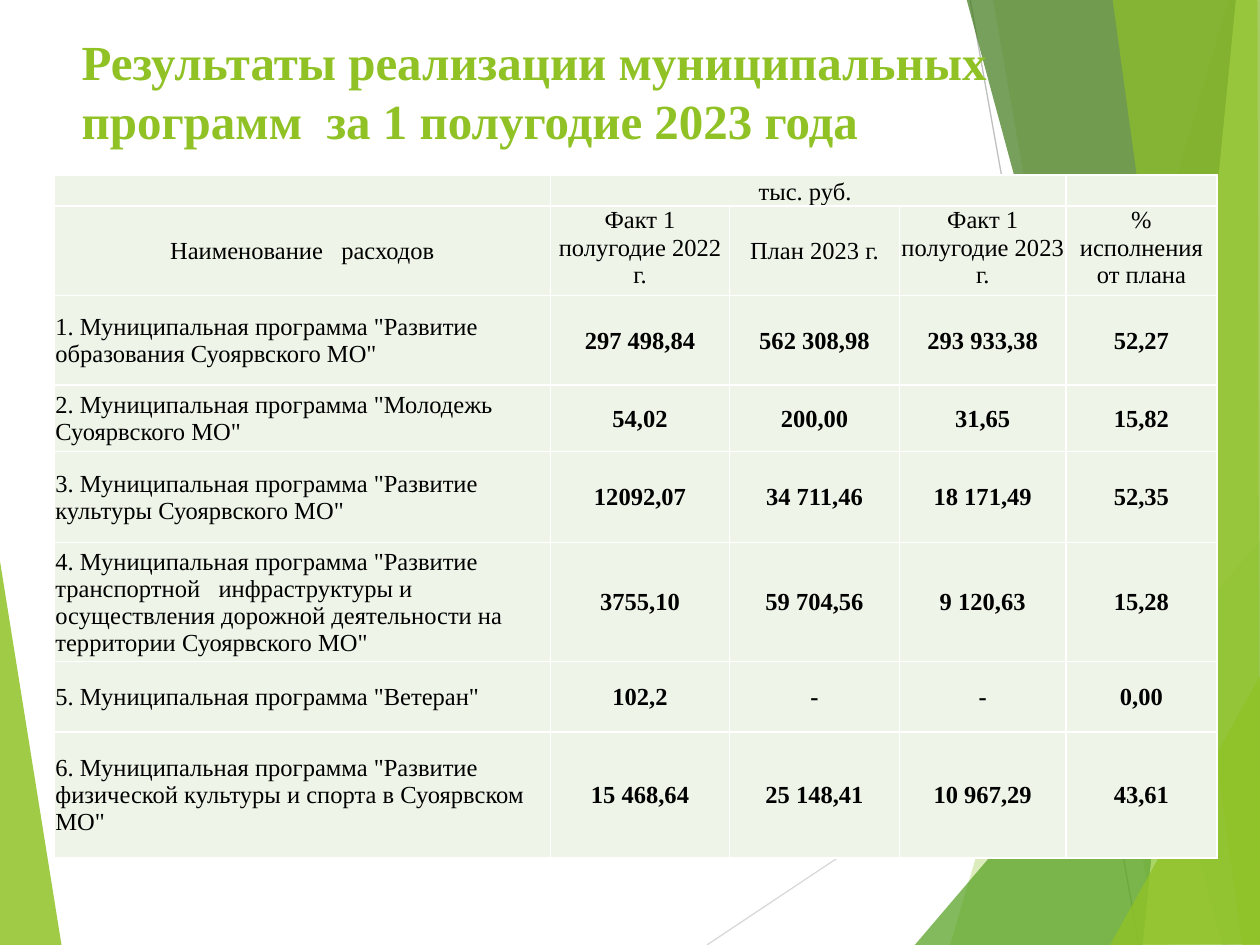
from dataclasses import dataclass

from lxml import etree
from pptx import Presentation
from pptx.dml.color import RGBColor
from pptx.enum.shapes import MSO_CONNECTOR
from pptx.enum.text import MSO_ANCHOR, PP_ALIGN
from pptx.oxml.ns import qn
from pptx.util import Inches, Pt

STRAIGHT = MSO_CONNECTOR.STRAIGHT
TOP, MIDDLE, BOTTOM = MSO_ANCHOR.TOP, MSO_ANCHOR.MIDDLE, MSO_ANCHOR.BOTTOM
LEFT, CENTER = PP_ALIGN.LEFT, PP_ALIGN.CENTER


@dataclass(frozen=True)
class Theme:
    font: str = "Times New Roman"
    accent: str = "90C226"
    text: str = "000000"
    cell: str = "EEF4E8"
    border: str = "FFFFFF"
    title_size: int = 28
    table_size: int = 14
    border_width: float = 1
    line_width: float = 0.75


@dataclass(frozen=True)
class Facet:
    points: tuple
    color: str
    opacity: int


@dataclass(frozen=True)
class Ray:
    start: tuple
    end: tuple
    color: str


THEME = Theme()

# Background, from back to front
DECORATIONS = (
    Facet(((-0.01, 4.39), (0.49, 7.51), (-0.01, 7.5)), THEME.accent, 85),
    Ray((5.61, 7.5), (10.01, 4.57), "D9D9D9"),
    Ray((7.7, 0), (9.04, 7.5), "BFBFBF"),
    Facet(((9.75, 0), (7.54, 7.5), (10.02, 7.51), (10.01, 0.01)), THEME.accent, 30),
    Facet(((7.88, -0.01), (9.19, 7.5), (10.01, 7.5), (10.01, -0.01)), THEME.accent, 20),
    Facet(((7.26, 7.5), (10, 4.29), (10.01, 7.5)), "54A021", 72),
    Facet(((7.67, -0.01), (9.7, 7.5), (10.01, 7.49), (10.01, -0.01)), "3F7819", 70),
    Facet(((9.81, -0.01), (9.07, 7.5), (10.01, 7.5), (10, -0.01)), "C0E474", 70),
    Facet(((8.83, -0.01), (9.86, 7.5), (10, 7.5), (9.98, -0.01)), THEME.accent, 65),
    Facet(((8.81, 7.5), (10.01, 5.35), (10.01, 7.49)), THEME.accent, 80),
)

TITLE = "Результаты реализации муниципальных \vпрограмм  за 1 полугодие 2023 года"
COLUMN_WIDTHS = (3.94, 1.42, 1.35, 1.32, 1.2)
ROW_HEIGHTS = (0.16, 0.63, 0.71, 0.53, 0.72, 0.79, 0.56, 1)
HEADER_ROWS = 2
HEADER_ANCHORS = (MIDDLE, TOP, MIDDLE, TOP, TOP)
TABLE_ROWS = (
    ("", "тыс. руб. ", "", "", ""),
    ("Наименование   расходов", "Факт 1 полугодие 2022 г.", "План 2023 г.",
     "Факт 1 полугодие 2023 г.", "% исполнения от плана"),
    ('1. Муниципальная программа "Развитие образования Суоярвского МО"',
     "297 498,84", "562 308,98", "293 933,38", "52,27"),
    ('2. Муниципальная программа "Молодежь Суоярвского МО"',
     "54,02", "200,00", "31,65", "15,82"),
    ('3. Муниципальная программа "Развитие культуры Суоярвского МО"',
     "12092,07", "34 711,46", "18 171,49", "52,35"),
    ('4. Муниципальная программа "Развитие транспортной   инфраструктуры и '
     'осуществления дорожной деятельности на территории Суоярвского МО"',
     "3755,10", "59 704,56", "9 120,63", "15,28"),
    ('5. Муниципальная программа "Ветеран"', "102,2", "-", "-", "0,00"),
    ('6. Муниципальная программа "Развитие физической культуры и спорта в Суоярвском МО"',
     "15 468,64", "25 148,41", "10 967,29", "43,61"),
)


def set_attributes(target, values: dict) -> None:
    for name, value in values.items():
        setattr(target, name, value)


def style_font(font, size: int, color: str, bold: bool) -> None:
    set_attributes(font, {"name": THEME.font, "size": Pt(size), "bold": bold})
    font.color.rgb = RGBColor.from_string(color)


def draw_facet(slide, facet: Facet) -> None:
    points = [(Inches(x), Inches(y)) for x, y in facet.points]
    builder = slide.shapes.build_freeform(*points[0])
    builder.add_line_segments(points[1:], close=True)
    shape = builder.convert_to_shape()
    shape.shadow.inherit = False
    shape.line.fill.background()
    shape.fill.solid()
    shape.fill.fore_color.rgb = RGBColor.from_string(facet.color)
    color = shape.element.spPr.find(qn("a:solidFill"))[0]
    etree.SubElement(color, qn("a:alpha"), val=str(facet.opacity * 1000))


def draw_ray(slide, ray: Ray) -> None:
    ends = [Inches(value) for value in ray.start + ray.end]
    connector = slide.shapes.add_connector(STRAIGHT, *ends)
    connector.line.width = Pt(THEME.line_width)
    connector.line.color.rgb = RGBColor.from_string(ray.color)
    etree.SubElement(connector.element.spPr, qn("a:effectLst"))


def draw_title(slide) -> None:
    box = slide.shapes.add_textbox(Inches(0.55), Inches(0.16), Inches(8.74), Inches(1.44))
    frame = box.text_frame
    set_attributes(frame, {"word_wrap": True, "vertical_anchor": TOP,
                           "margin_top": Inches(0.09)})
    paragraph = frame.paragraphs[0]
    paragraph.text = TITLE
    for run in paragraph.runs:
        style_font(run.font, THEME.title_size, THEME.accent, True)


def add_borders(cell) -> None:
    properties = cell._tc.get_or_add_tcPr()
    for side in ("lnL", "lnR", "lnT", "lnB"):
        line = etree.SubElement(properties, qn(f"a:{side}"),
                                w=str(Pt(THEME.border_width)))
        fill = etree.SubElement(line, qn("a:solidFill"))
        etree.SubElement(fill, qn("a:srgbClr"), val=THEME.border)


def fill_cell(cell, text: str, anchor, alignment, bold: bool) -> None:
    add_borders(cell)
    cell.fill.solid()
    cell.fill.fore_color.rgb = RGBColor.from_string(THEME.cell)
    set_attributes(cell, {"margin_left": Inches(0.01), "margin_right": Inches(0.01),
                          "margin_top": Inches(0.01), "margin_bottom": 0,
                          "vertical_anchor": anchor})
    paragraph = cell.text_frame.paragraphs[0]
    paragraph.alignment = alignment
    if text:
        run = paragraph.add_run()
        run.text = text
        style_font(run.font, THEME.table_size, THEME.text, bold)
    else:
        # Keeps the line height of an empty cell at the table's type size
        etree.SubElement(paragraph._p, qn("a:endParaRPr"), sz=str(THEME.table_size * 100))


def draw_table(slide) -> None:
    frame = slide.shapes.add_table(
        len(ROW_HEIGHTS), len(COLUMN_WIDTHS), Inches(0.43), Inches(1.39),
        Inches(sum(COLUMN_WIDTHS)), Inches(sum(ROW_HEIGHTS)))
    table = frame.table
    set_attributes(table, {"first_row": False, "horz_banding": False})
    for column, width in zip(table.columns, COLUMN_WIDTHS):
        column.width = Inches(width)
    for row, height in zip(table.rows, ROW_HEIGHTS):
        row.height = Inches(height)
    for row_index, texts in enumerate(TABLE_ROWS):
        is_body = row_index >= HEADER_ROWS
        anchors = (BOTTOM,) * len(texts) if row_index == 0 else HEADER_ANCHORS
        for column_index, text in enumerate(texts):
            fill_cell(table.cell(row_index, column_index), text,
                      MIDDLE if is_body else anchors[column_index],
                      LEFT if is_body and column_index == 0 else CENTER,
                      is_body and column_index > 0)
    table.cell(0, 1).merge(table.cell(0, 3))


def main() -> None:
    presentation = Presentation()
    set_attributes(presentation, {"slide_width": Inches(10), "slide_height": Inches(7.5)})
    slide = presentation.slides.add_slide(presentation.slide_layouts[6])
    for decoration in DECORATIONS:
        if isinstance(decoration, Facet):
            draw_facet(slide, decoration)
        else:
            draw_ray(slide, decoration)
    draw_title(slide)
    draw_table(slide)
    presentation.save("out.pptx")


if __name__ == "__main__":
    main()
